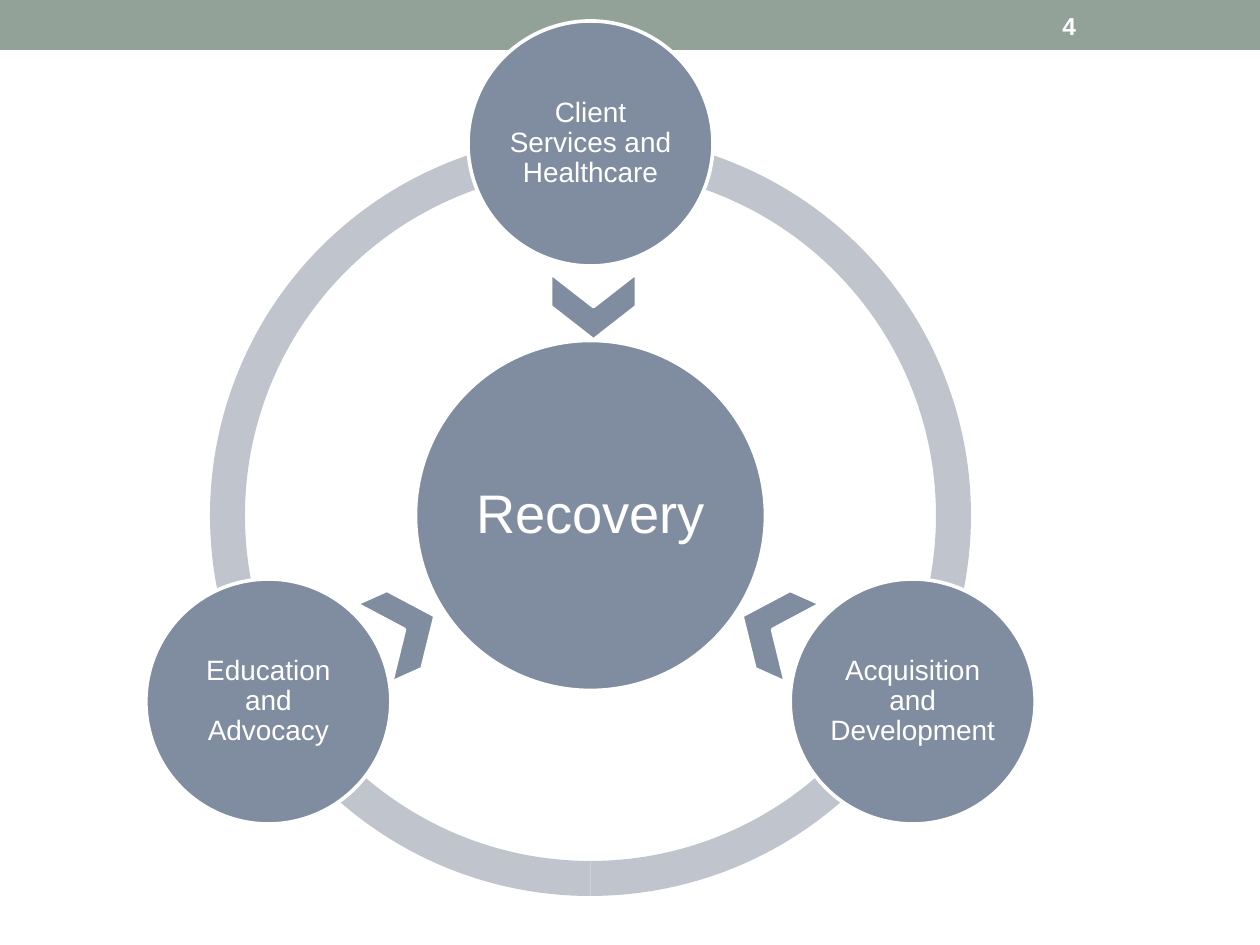
import math

from pptx import Presentation, util as u
from pptx.dml.color import RGBColor
from pptx.enum import shapes, text

SCALE = u.Inches(1) / 126  # EMU in one px
COLORS = {"band": "93A299", "ring": "C0C5CD", "node": "808DA0", "white": "FFFFFF"}
FONT = "Arial"
OUTLINE = u.Pt(2.08)


def px(length):
    return u.Emu(round(length * SCALE))


def color(name):
    return RGBColor.from_string(COLORS[name])


def add_part(page, kind, box, fill, outlined=False):
    part = page.shapes.add_shape(kind, *map(px, box))
    part.shadow.inherit = False
    part.fill.solid()
    part.fill.fore_color.rgb = color(fill)
    if outlined:
        part.line.color.rgb = color("white")
        part.line.width = OUTLINE
    else:
        part.line.fill.background()
    return part


def set_text(shape, words, size, align, bold=False):
    frame = shape.text_frame
    frame.word_wrap = True
    frame.vertical_anchor = text.MSO_ANCHOR.MIDDLE
    frame.text = words
    para = frame.paragraphs[0]
    para.alignment = align
    span = para.runs[0]
    span.font.name = FONT
    span.font.size = u.Pt(size)
    span.font.bold = bold
    span.font.color.rgb = color("white")
    return frame


def add_header(page, box, number):
    """Colour band with the page number near its right end."""
    left, top, width, height = box
    add_part(page, shapes.MSO_SHAPE.RECTANGLE, box, "band")
    label = page.shapes.add_textbox(px(left + 1050), px(top + 3), px(147), px(height - 5))
    set_text(label, number, 14, text.PP_ALIGN.LEFT, bold=True)


def add_circle(page, center, diameter, words, size, inset):
    x, y = center
    box = (x - diameter / 2, y - diameter / 2, diameter, diameter)
    circle = add_part(page, shapes.MSO_SHAPE.OVAL, box, "node", outlined=True)
    frame = set_text(circle, words, size, text.PP_ALIGN.CENTER)
    frame.margin_left = frame.margin_right = px(inset)
    frame.margin_top = frame.margin_bottom = px(inset)
    frame.paragraphs[0].line_spacing = 0.9


def add_cycle(page, box, hub, topics):
    """Ring of topics around a hub, with chevrons pointing inwards."""
    left, top, diameter, _ = box
    center_x, center_y = left + diameter / 2, top + diameter / 2

    # Ring segments
    for start, end in ((90, 162), (18, 90), (162, 18)):
        arc = add_part(page, shapes.MSO_SHAPE.BLOCK_ARC, box, "ring")
        # Angles are stored in 1/60000 degree, adjustments in 1/100000
        arc.adjustments[0] = start * 0.6
        arc.adjustments[1] = end * 0.6
        arc.adjustments[2] = 0.046

    # Hub, then topics clockwise from the top
    add_circle(page, (center_x, center_y), 350, hub, 31, 5)
    orbit = 372
    for index, words in enumerate(topics):
        angle = math.radians(120 * index - 90)
        spot = (center_x + orbit * math.cos(angle), center_y + orbit * math.sin(angle))
        add_circle(page, spot, 245, words, 16, 3)

    # Chevrons: offset from the centre, and direction
    width, height = 67, 86
    for dx, dy, turn in ((3, -209, 90), (182, 114, 204.1), (-186, 114, 335.9)):
        spot = (center_x + dx - width / 2, center_y + dy - height / 2, width, height)
        chevron = add_part(page, shapes.MSO_SHAPE.CHEVRON, spot, "node", outlined=True)
        chevron.rotation = turn


def main():
    deck = Presentation()
    deck.slide_width, deck.slide_height = px(1260), px(945)
    page = deck.slides.add_slide(deck.slide_layouts[6])
    add_header(page, (0, 0, 1260, 50), "4")
    add_cycle(
        page,
        (210, 135, 761, 761),
        "Recovery",
        ("Client Services and Healthcare", "Acquisition and Development", "Education and Advocacy"),
    )
    deck.save("out.pptx")


if __name__ == "__main__":
    main()
